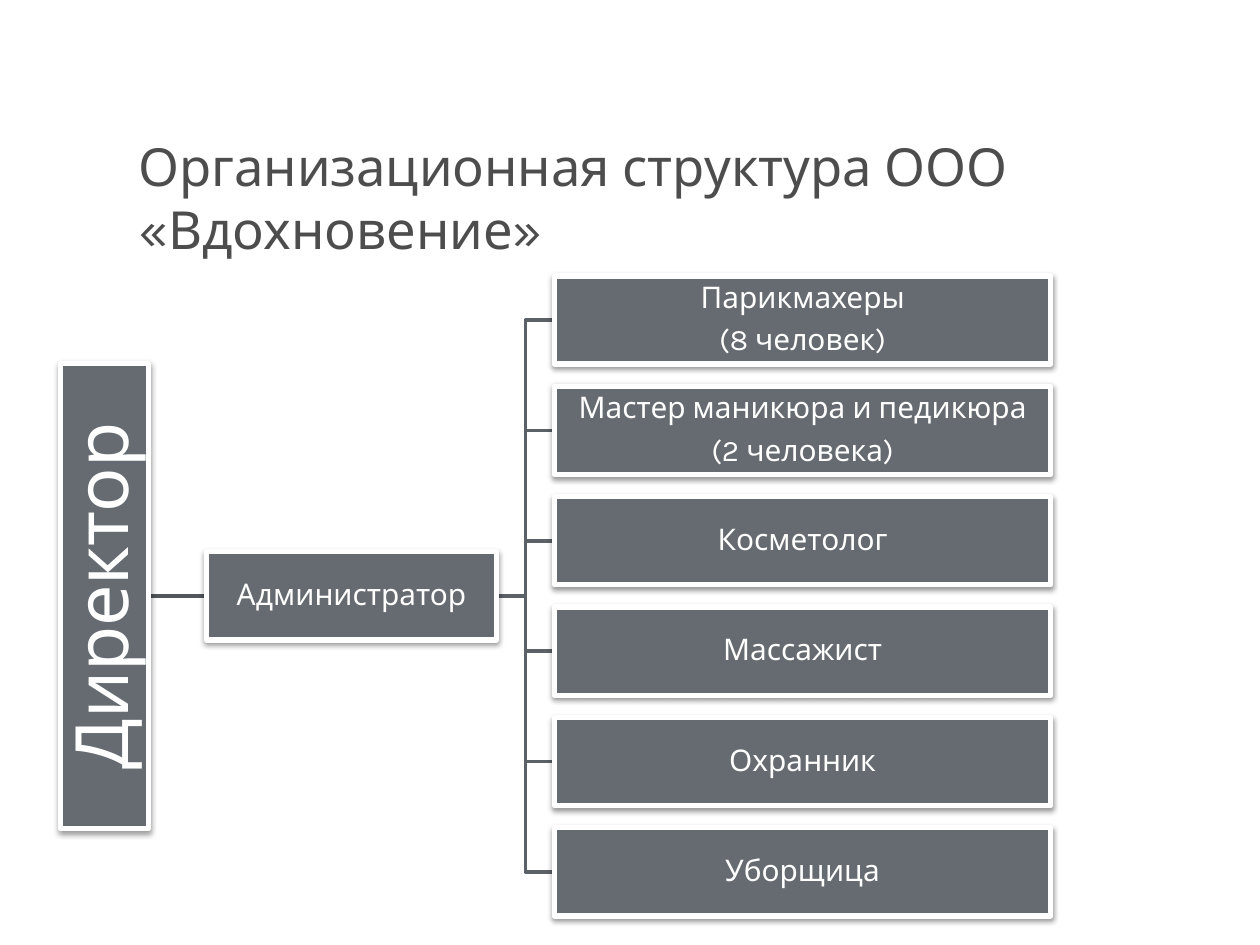
from lxml import etree
from pptx import Presentation, util as u
from pptx.dml.color import RGBColor
from pptx.enum import shapes, text
from pptx.oxml import parse_xml
from pptx.oxml.ns import nsdecls, qn

TITLE = RGBColor(0x4D, 0x4D, 0x4D)
BOX = RGBColor(0x65, 0x6B, 0x71)
WHITE = RGBColor(0xFF, 0xFF, 0xFF)
BRANCH = RGBColor(0x5C, 0x61, 0x67)
TRUNK = RGBColor(0x51, 0x56, 0x5A)

# Chart grid: equal rows, one left edge per level
TOP, PITCH, BOX_H = 2.19, 0.876, 0.7
DIRECTOR_X, ADMIN_X, STAFF_X = 0.48, 1.64, 4.4
DIRECTOR_LEN, ADMIN_W, STAFF_W = 3.69, 2.3, 3.94

STAFF = [
    "Парикмахеры\n(8 человек)",
    "Мастер маникюра и педикюра\n(2 человека)",
    "Косметолог",
    "Массажист",
    "Охранник",
    "Уборщица",
]


def row_top(row):
    return TOP + row * PITCH


def row_middle(row):
    return row_top(row) + BOX_H / 2


def write(shape, words, size, color, align=text.PP_ALIGN.LEFT, inset=None,
          spacing=None, after=None):
    frame = shape.text_frame
    frame.word_wrap = True
    frame.vertical_anchor = text.MSO_ANCHOR.MIDDLE
    if inset is not None:
        frame.margin_left = frame.margin_right = u.Inches(inset)
        frame.margin_top = frame.margin_bottom = u.Inches(inset)
    frame.text = words
    for paragraph in frame.paragraphs:
        paragraph.alignment = align
        paragraph.line_spacing = spacing
        paragraph.space_after = after
        for run in paragraph.runs:
            run.font.name = "Karla"
            run.font.size = u.Pt(size)
            run.font.color.rgb = color


class OrgChart:
    def __init__(self, prs):
        self.slide = prs.slides.add_slide(prs.slide_layouts[6])
        self.shapes = self.slide.shapes

    def title(self, words):
        box = self.shapes.add_textbox(*map(u.Inches, (1, 1.17, 8, 0.78)))
        write(box, words, 30, TITLE)

    def box(self, words, x, y, w, size=17, inset=0.01, rotation=0):
        box = self.shapes.add_shape(
            shapes.MSO_SHAPE.RECTANGLE, *map(u.Inches, (x, y, w, BOX_H)))
        box.rotation = rotation
        box.fill.solid()
        box.fill.fore_color.rgb = BOX
        box.line.color.rgb = WHITE
        box.line.width = u.Pt(3)
        self.soft_shadow(box)
        write(box, words, size, WHITE, text.PP_ALIGN.CENTER, inset,
              spacing=0.9, after=u.Pt(6))
        return box

    def soft_shadow(self, shape):
        shape.shadow.inherit = False
        effects = shape._element.spPr.find(qn("a:effectLst"))
        effects.append(parse_xml(
            f'<a:outerShdw {nsdecls("a")} blurRad="{u.Pt(3.1)}" '
            f'dist="{u.Pt(1.6)}" dir="5400000" rotWithShape="0">'
            '<a:srgbClr val="000000"><a:alpha val="38000"/></a:srgbClr>'
            '</a:outerShdw>'))

    def branch(self, points):
        start, *rest = [(u.Inches(x), u.Inches(y)) for x, y in points]
        builder = self.shapes.build_freeform(*start)
        builder.add_line_segments(rest, close=False)
        line = builder.convert_to_shape()
        line.fill.background()
        line.shadow.inherit = False
        line.line.color.rgb = BRANCH
        line.line.width = u.Pt(2)

    def trunk(self, director, admin, x, y):
        line = self.shapes.add_connector(
            shapes.MSO_CONNECTOR.STRAIGHT, 0, 0, 0, 0)
        # The turned box has its bottom side facing right
        line.begin_connect(director, 2)
        line.end_connect(admin, 1)
        line.begin_x, line.begin_y = u.Inches(x), u.Inches(y)
        line.end_x, line.end_y = admin.left, u.Inches(y)
        line.line.color.rgb = TRUNK
        line.line.width = u.Pt(2)
        etree.SubElement(line._element.spPr, qn("a:effectLst"))
        # Keep the line behind the box borders
        director._element.addprevious(line._element)


def main():
    prs = Presentation()
    prs.slide_width, prs.slide_height = u.Inches(10), u.Inches(7.5)
    chart = OrgChart(prs)
    chart.title("Организационная структура ООО «Вдохновение»")

    # Branches from the administrator to each member of staff
    center_row = (len(STAFF) - 1) / 2
    center_y = row_middle(center_row)
    admin_right = ADMIN_X + ADMIN_W
    bend = (admin_right + STAFF_X) / 2
    for row in reversed(range(len(STAFF))):
        y = row_middle(row)
        chart.branch([(admin_right, center_y), (bend, center_y),
                      (bend, y), (STAFF_X, y)])

    # Director (turned to read upwards) and administrator
    director = chart.box("Директор", DIRECTOR_X + (BOX_H - DIRECTOR_LEN) / 2,
                         row_top(center_row), DIRECTOR_LEN,
                         size=42, inset=0.03, rotation=270)
    admin = chart.box("Администратор", ADMIN_X, row_top(center_row), ADMIN_W)
    chart.trunk(director, admin, DIRECTOR_X + BOX_H, center_y)

    # Staff
    for row, role in enumerate(STAFF):
        chart.box(role, STAFF_X, row_top(row), STAFF_W)

    prs.save("out.pptx")


if __name__ == "__main__":
    main()
